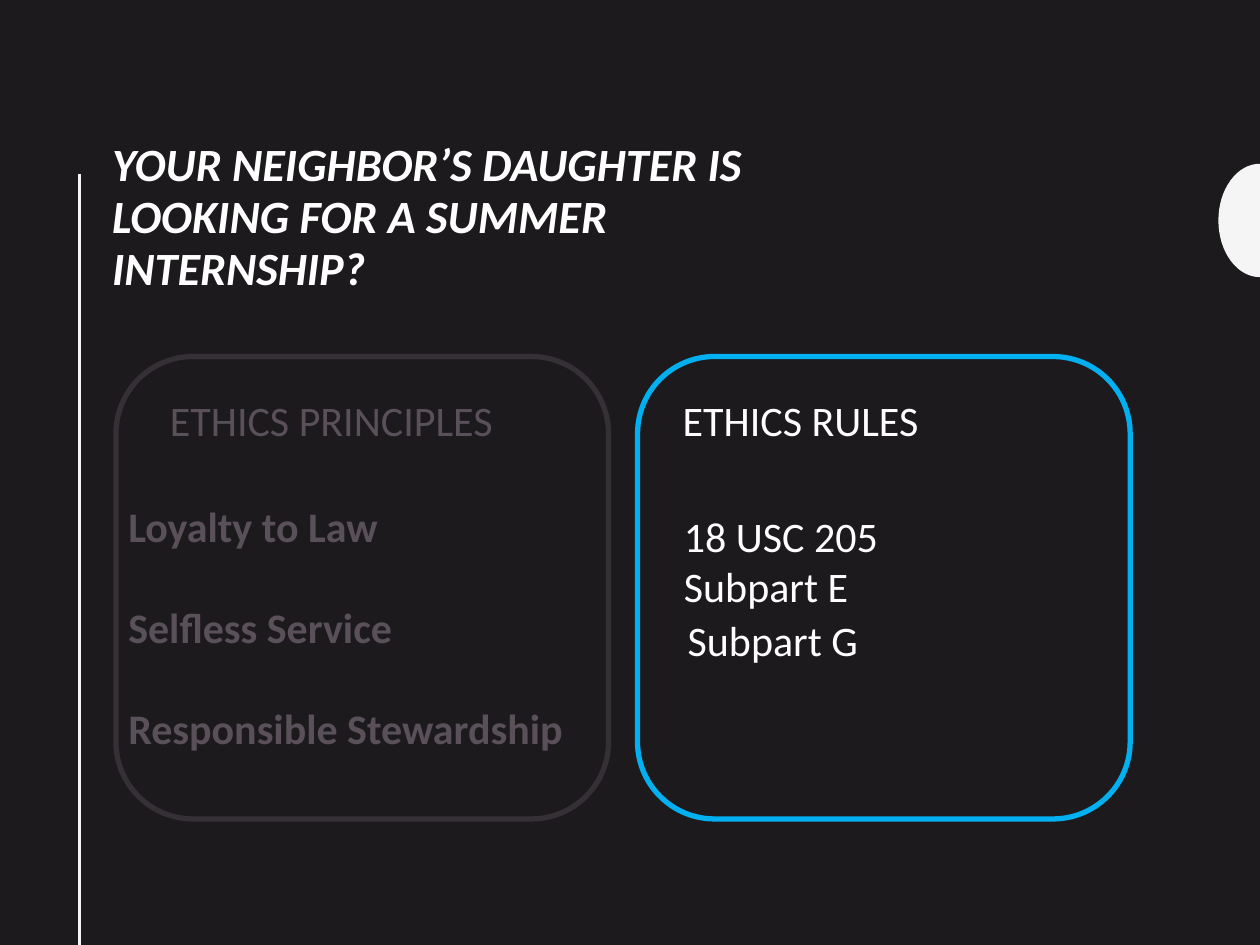
from dataclasses import dataclass
from math import cos, pi, sin

from pptx import Presentation
from pptx.dml.color import RGBColor
from pptx.enum.shapes import MSO_CONNECTOR as Connector, MSO_SHAPE as Shape
from pptx.enum.text import MSO_ANCHOR as Anchor, MSO_AUTO_SIZE as AutoSize, PP_ALIGN as Align
from pptx.oxml.ns import qn
from pptx.util import Inches, Pt


@dataclass(frozen=True)
class Theme:
    font: str = "Calibri"
    background: str = "1D1A1D"
    ornament: str = "F5F5F5"
    text: str = "FFFFFF"
    muted_text: str = "595059"
    muted_line: str = "353035"
    accent: str = "00B0F0"
    title_size: float = 26.4
    body_size: float = 24
    rule_width: float = 2
    panel_width: float = 3


class SlideBuilder:
    def __init__(self, slide, theme):
        self.slide = slide
        self.theme = theme
        self.fill(slide.background.fill, theme.background)

    def fill(self, fill, color):
        fill.solid()
        fill.fore_color.rgb = RGBColor.from_string(color)

    def place(self, shape, left, top, width, height):
        shape.left, shape.top = Inches(left), Inches(top)
        shape.width, shape.height = Inches(width), Inches(height)

    def set_text(self, frame, lines, size, color, bold=False, italic=False):
        frame.text = "\n".join(lines)
        frame.word_wrap = True
        frame.auto_size = AutoSize.NONE
        frame.vertical_anchor = Anchor.TOP
        for paragraph in frame.paragraphs:
            paragraph.alignment = Align.LEFT
            for run in paragraph.runs:
                font = run.font
                font.name, font.size = self.theme.font, Pt(size)
                font.bold, font.italic = bold, italic
                font.color.rgb = RGBColor.from_string(color)

    def title(self, text, *box):
        heading = self.slide.shapes.title
        self.place(heading, *box)
        self.set_text(heading.text_frame, [text], self.theme.title_size,
                      self.theme.text, bold=True, italic=True)
        heading.text_frame.paragraphs[0].line_spacing = 0.94

    def text(self, lines, color, *box, bold=False, gap=0):
        frame = self.slide.shapes.add_textbox(*map(Inches, box)).text_frame
        self.set_text(frame, lines, self.theme.body_size, color, bold)
        for paragraph in frame.paragraphs[1:]:
            paragraph.space_before = Pt(gap)

    def panel(self, color, *box):
        panel = self.slide.shapes.add_shape(Shape.ROUNDED_RECTANGLE, *map(Inches, box))
        panel.shadow.inherit = False
        panel.fill.background()
        self.fill(panel.line.fill, color)
        panel.line.width = Pt(self.theme.panel_width)

    def vertical_rule(self, x, top, bottom):
        rule = self.slide.shapes.add_connector(
            Connector.STRAIGHT, Inches(x), Inches(top), Inches(x), Inches(bottom))
        self.fill(rule.line.fill, self.theme.ornament)
        rule.line.width = Pt(self.theme.rule_width)
        properties = rule._element.spPr
        properties.append(properties.makeelement(qn("a:effectLst"), {}))

    def left_half_ellipse(self, center_x, center_y, radius_x, radius_y, steps=32):
        angles = [pi * step / steps for step in range(steps + 1)]
        points = [(Inches(center_x - radius_x * sin(angle)),
                   Inches(center_y - radius_y * cos(angle))) for angle in angles]
        outline = self.slide.shapes.build_freeform(*points[0])
        outline.add_line_segments(points[1:], close=True)
        tab = outline.convert_to_shape()
        tab.shadow.inherit = False
        self.fill(tab.fill, self.theme.ornament)
        tab.line.fill.background()


def main():
    theme = Theme()
    deck = Presentation()
    deck.slide_width, deck.slide_height = Inches(10), Inches(7.5)
    title_only = deck.slide_layouts[5]
    page = SlideBuilder(deck.slides.add_slide(title_only), theme)

    # Edge ornaments
    page.left_half_ellipse(10, 1.75, 0.33, 0.45)
    page.vertical_rule(0.63, 1.38, 7.5)

    # Title
    page.title("YOUR NEIGHBOR’S DAUGHTER IS LOOKING FOR A SUMMER INTERNSHIP?",
               0.79, 1.06, 6, 1.62)

    # Panels with their headings
    panels = [
        ("ETHICS PRINCIPLES", 0.92, 1.25, theme.muted_text, theme.muted_line),
        ("ETHICS RULES", 5.06, 5.32, theme.text, theme.accent),
    ]
    for heading, panel_left, heading_left, text_color, line_color in panels:
        page.text([heading], text_color, heading_left, 3.08, 3.61, 0.5)
        page.panel(line_color, panel_left, 2.83, 3.91, 3.67)

    # Principles, one empty line's height apart
    page.text(["Loyalty to Law", "Selfless Service", "Responsible Stewardship"],
              theme.muted_text, 0.92, 3.92, 3.84, 2.12, bold=True, gap=29)

    # Rules
    page.text(["18 USC 205", "Subpart E"], theme.text, 5.33, 4, 3.6, 0.91)
    page.text(["Subpart G"], theme.text, 5.36, 4.83, 3.6, 0.5)

    deck.save("out.pptx")


if __name__ == "__main__":
    main()
